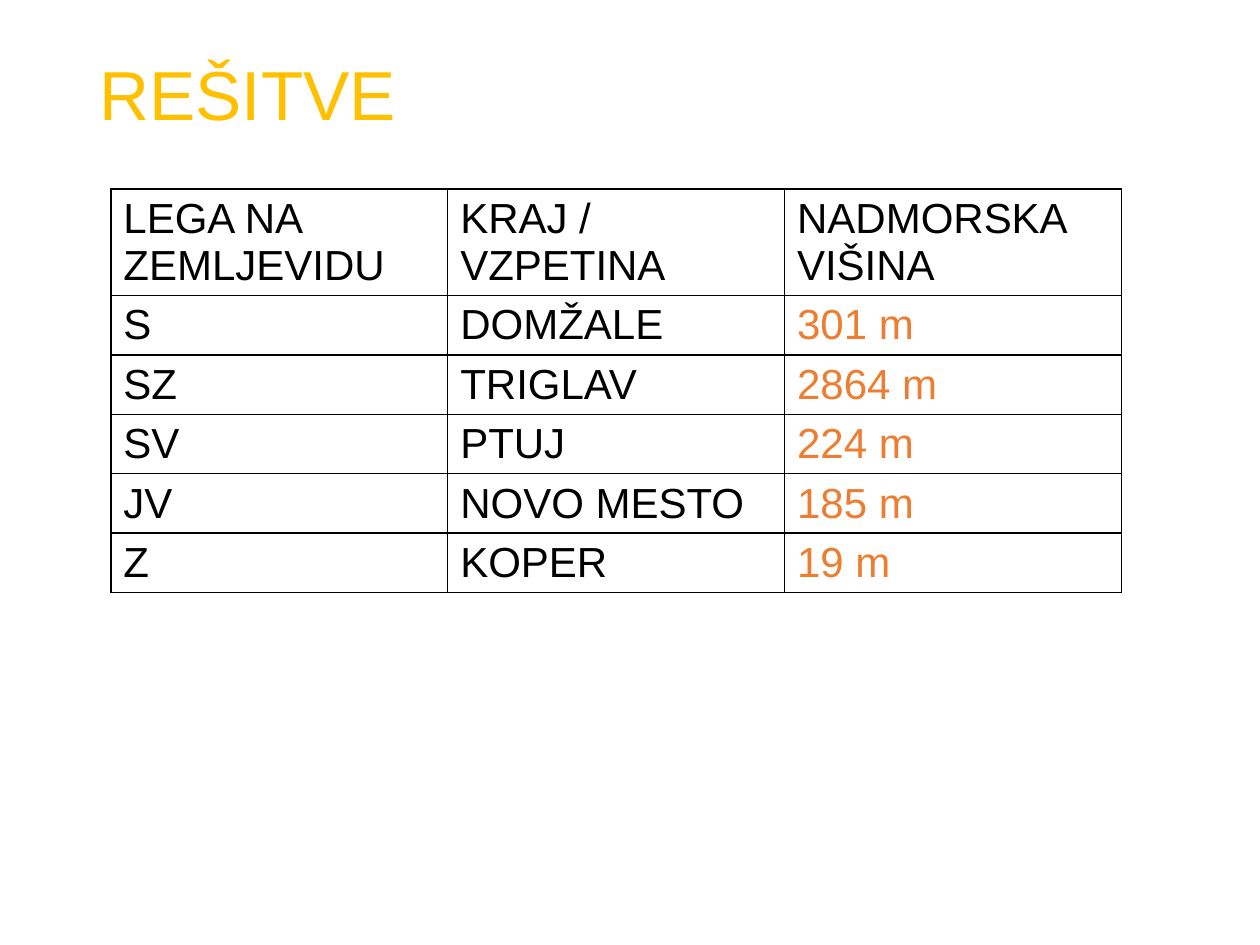
from pptx import Presentation
from pptx.dml.color import RGBColor
from pptx.enum.text import MSO_ANCHOR, PP_ALIGN
from pptx.oxml import parse_xml
from pptx.oxml.ns import nsdecls
from pptx.util import Inches, Pt

MIDDLE = MSO_ANCHOR.MIDDLE
LEFT = PP_ALIGN.LEFT
TITLE_ONLY = 5

GOLD = RGBColor(0xFF, 0xC0, 0x00)
BLACK = RGBColor(0x00, 0x00, 0x00)
ORANGE = RGBColor(0xED, 0x7D, 0x31)
FONT = "Arial"

ROWS = [
    ("LEGA NA ZEMLJEVIDU", "KRAJ / VZPETINA", "NADMORSKA VIŠINA"),
    ("S", "DOMŽALE", "301 m"),
    ("SZ", "TRIGLAV", "2864 m"),
    ("SV", "PTUJ", "224 m"),
    ("JV", "NOVO MESTO", "185 m"),
    ("Z", "KOPER", "19 m"),
]
HEIGHT_COLUMN = 2


def add_span(para, text, size, color):
    span = para.add_run()
    span.text = text
    span.font.name = FONT
    span.font.size = Pt(size)
    span.font.color.rgb = color


def place_title(page, text, left, top, width, height):
    title = page.shapes.title
    title.left, title.top = Inches(left), Inches(top)
    title.width, title.height = Inches(width), Inches(height)
    frame = title.text_frame
    frame.vertical_anchor = MIDDLE
    para = frame.paragraphs[0]
    para.alignment = LEFT
    para.line_spacing = 0.9
    add_span(para, text, 39.6, GOLD)


def add_borders(cell, color, width):
    properties = cell._tc.get_or_add_tcPr()
    for position, side in enumerate(("lnL", "lnR", "lnT", "lnB")):
        properties.insert(position, parse_xml(
            f'<a:{side} {nsdecls("a")} w="{Pt(width)}"><a:solidFill>'
            f'<a:srgbClr val="{color}"/></a:solidFill></a:{side}>'))


def add_answer_table(page, left, top, width, row_height):
    column_count = len(ROWS[0])
    table = page.shapes.add_table(
        len(ROWS), column_count, Inches(left), Inches(top),
        Inches(width), Inches(row_height * len(ROWS))).table
    table.first_row = False
    table.horz_banding = False
    for row_index, row in enumerate(ROWS):
        for column_index, text in enumerate(row):
            cell = table.cell(row_index, column_index)
            cell.fill.background()
            add_borders(cell, BLACK, 1)
            is_answer = row_index > 0 and column_index == HEIGHT_COLUMN
            add_span(cell.text_frame.paragraphs[0], text, 24,
                     ORANGE if is_answer else BLACK)


def main():
    deck = Presentation()
    deck.slide_width, deck.slide_height = Inches(10), Inches(7.5)
    page = deck.slides.add_slide(deck.slide_layouts[TITLE_ONLY])
    place_title(page, "REŠITVE", 0.69, 0.4, 8.62, 0.75)
    add_answer_table(page, 0.88, 1.5, 8.02, 0.41)
    deck.save("out.pptx")


if __name__ == "__main__":
    main()
